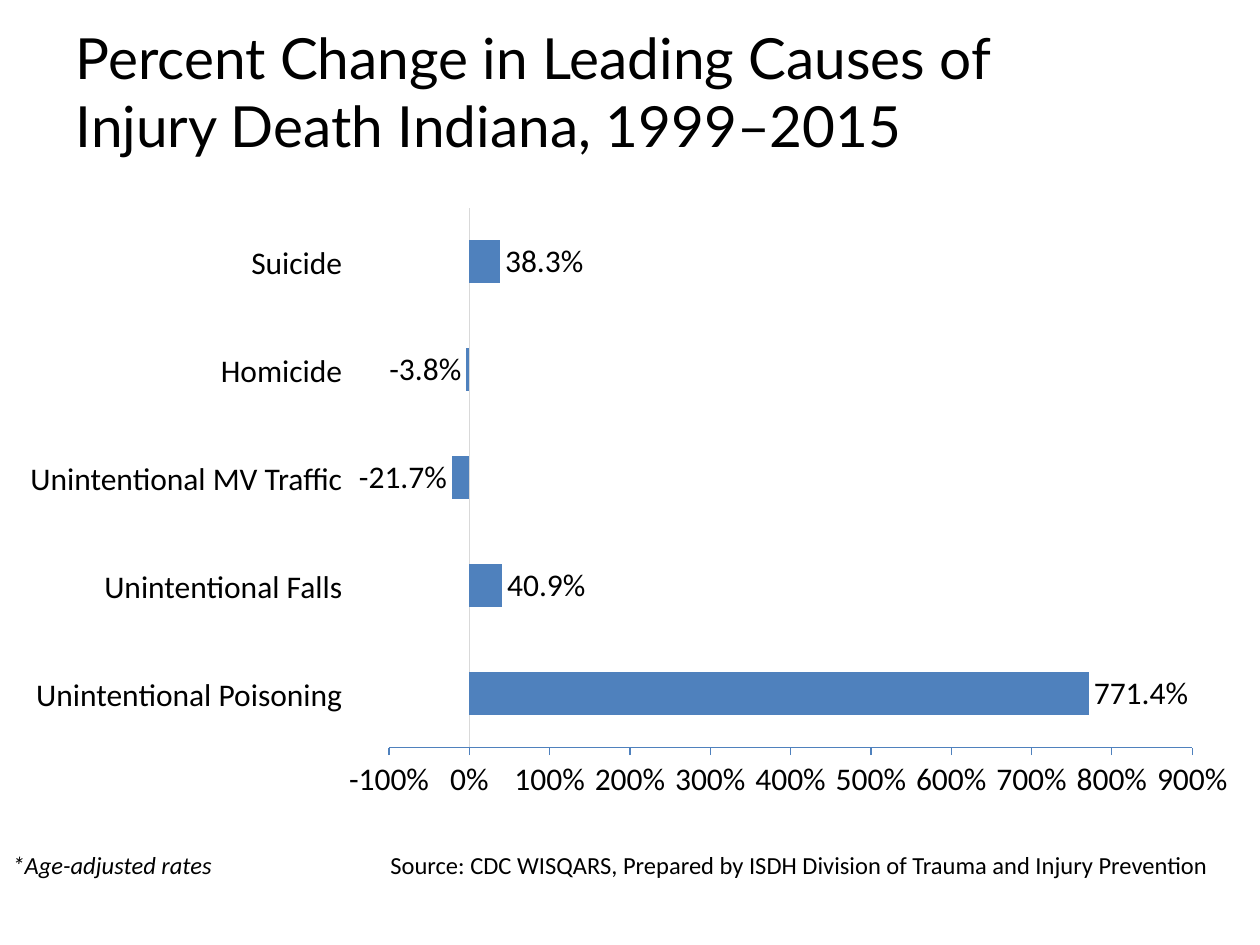
from dataclasses import dataclass
from pptx import Presentation
from pptx.chart.data import CategoryChartData as ChartData
from pptx.dml.color import RGBColor as Color
from pptx.enum.chart import XL_CHART_TYPE as Kind, XL_LABEL_POSITION as Spot
from pptx.enum.chart import XL_TICK_LABEL_POSITION as Place, XL_TICK_MARK as Tick
from pptx.enum.text import MSO_ANCHOR as Anchor, PP_ALIGN as Align
from pptx.oxml import parse_xml
from pptx.oxml.ns import nsdecls
from pptx.util import Cm, Pt


@dataclass(frozen=True)
class Theme:
    head: str = "Lato"
    body: str = "Calibri"
    ink: Color = Color(0, 0, 0)
    bar: Color = Color(0x4F, 0x81, 0xBD)
    rule: Color = Color(0xD9, 0xD9, 0xD9)
    big: float = 32.4
    mid: float = 18
    small: float = 14


# Bars from bottom to top
RATES = {
    "Unintentional Poisoning": 7.714,
    "Unintentional Falls": 0.409,
    "Unintentional MV Traffic": -0.217,
    "Homicide": -0.038,
    "Suicide": 0.383,
}


class Deck:
    def __init__(self, theme):
        self.theme = theme
        self.prs = Presentation()
        self.prs.slide_width, self.prs.slide_height = Cm(25.4), Cm(19.05)
        self.slide = self.prs.slides.add_slide(self.prs.slide_layouts[5])

    def style(self, font, size, name=None):
        font.name, font.size = name or self.theme.body, Pt(size)
        font.color.rgb, font.bold = self.theme.ink, False

    def title(self, text, left, top, width, height):
        box = self.slide.shapes.title
        box.left, box.top, box.width, box.height = map(Cm, (left, top, width, height))
        frame = box.text_frame
        frame.text = text
        frame.word_wrap, frame.vertical_anchor = True, Anchor.MIDDLE
        frame.margin_bottom = Cm(1.15)
        para = frame.paragraphs[0]
        para.alignment = Align.LEFT
        self.style(para.runs[0].font, self.theme.big, self.theme.head)

    def note(self, text, left, top, width, height, size, italic=False, align=Align.LEFT):
        box = self.slide.shapes.add_textbox(*map(Cm, (left, top, width, height)))
        frame = box.text_frame
        frame.text, frame.word_wrap = text, True
        para = frame.paragraphs[0]
        para.alignment = align
        font = para.runs[0].font
        self.style(font, size)
        font.italic = italic
        return frame

    def bars(self, rates, left, top, width, height, inner):
        data = ChartData(number_format="0.0%")
        data.categories = list(rates)
        data.add_series("Series 1", list(rates.values()))
        chart = self.slide.shapes.add_chart(
            Kind.BAR_CLUSTERED, *map(Cm, (left, top, width, height)), data).chart
        chart.has_legend = chart.has_title = False
        self.style(chart.font, self.theme.mid)

        # Plot frame, as shares of the chart
        parts = "".join(f'<c:{key} val="{val}"/>' for key, val in zip("xywh", inner))
        area = chart._chartSpace.chart.plotArea
        for old in area.findall("{*}layout"):
            area.remove(old)
        area.insert(0, parse_xml(
            f'<c:layout {nsdecls("c")}><c:manualLayout><c:layoutTarget val="inner"/>'
            f'<c:xMode val="edge"/><c:yMode val="edge"/>{parts}'
            '</c:manualLayout></c:layout>'))

        # Bars and their values
        plot = chart.plots[0]
        plot.gap_width, plot.vary_by_categories = 150, False
        bar = plot.series[0]
        bar.invert_if_negative = False
        bar.format.fill.solid()
        bar.format.fill.fore_color.rgb = self.theme.bar
        tags = bar.data_labels
        tags.show_value, tags.position = True, Spot.OUTSIDE_END
        tags.number_format, tags.number_format_is_linked = "0.0%", False
        self.style(tags.font, self.theme.mid)

        # Axes
        cat, val = chart.category_axis, chart.value_axis
        for axis, tint in ((cat, self.theme.rule), (val, self.theme.bar)):
            axis.has_major_gridlines = False
            axis.minor_tick_mark = Tick.NONE
            axis.format.line.color.rgb = tint
            axis.format.line.width = Pt(0.75)
            self.style(axis.tick_labels.font, self.theme.mid)
        cat.major_tick_mark = Tick.NONE
        cat.tick_label_position = Place.NONE
        val.major_tick_mark = Tick.OUTSIDE
        val.minimum_scale, val.maximum_scale, val.major_unit = -1, 9, 1
        val.tick_labels.number_format = "0%"
        val.tick_labels.number_format_is_linked = False

        # Row names, one column clear of the negative values
        step = height * inner[3] / len(rates)
        base = top + height * (inner[1] + inner[3])
        for row, name in enumerate(rates):
            frame = self.note(name, 0, base - (row + 1) * step, 7.15, step,
                              self.theme.mid, align=Align.RIGHT)
            frame.vertical_anchor = Anchor.MIDDLE

    def save(self):
        self.prs.save("out.pptx")


def main():
    theme = Theme()
    deck = Deck(theme)
    deck.title("Percent Change in Leading Causes of Injury Death Indiana, 1999–2015",
               1.27, 0.76, 19.48, 3.18)
    deck.bars(RATES, 0, 3.94, 25.3, 12.37, (0.31, 0.02, 0.64, 0.88))
    # Source and footnote
    deck.note("Source: CDC WISQARS, Prepared by ISDH Division of Trauma and Injury Prevention",
              7.62, 17.02, 17.68, 0.86, theme.small)
    deck.note("*Age-adjusted rates", 0, 17.02, 7.19, 0.69, theme.small, italic=True)
    deck.save()


if __name__ == "__main__":
    main()
